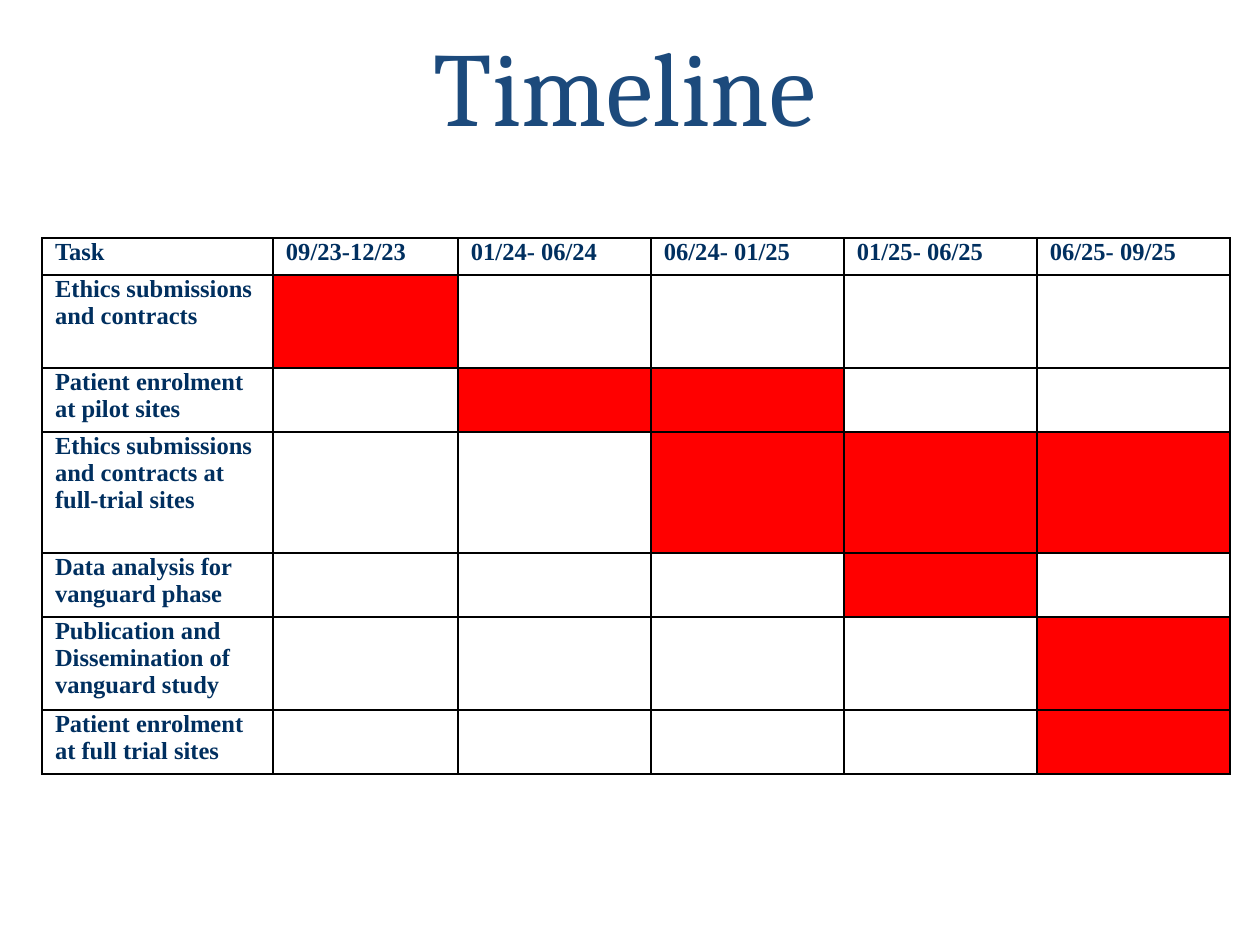
from dataclasses import dataclass

from lxml.etree import SubElement
from pptx import Presentation
from pptx.dml.color import RGBColor
from pptx.enum.text import MSO_ANCHOR, PP_ALIGN
from pptx.oxml.ns import qn
from pptx.slide import Slide
from pptx.table import _Cell
from pptx.util import Emu, Pt

PX = 914400 // 126
TITLE_BLUE = RGBColor(0x1C, 0x4A, 0x7C)
TEXT_NAVY = RGBColor(0x00, 0x2F, 0x5F)
ACTIVE_RED = RGBColor(0xFF, 0x00, 0x00)
BORDER_BLACK = RGBColor(0x00, 0x00, 0x00)


@dataclass(frozen=True)
class Task:
    name: str
    first: int
    last: int
    height: int


PERIODS = ["09/23-12/23", "01/24- 06/24", "06/24- 01/25", "01/25- 06/25", "06/25- 09/25"]
TASKS = [
    Task("Ethics submissions and contracts", 1, 1, 93),
    Task("Patient enrolment at pilot sites", 2, 3, 64),
    Task("Ethics submissions and contracts at full-trial sites", 3, 5, 121),
    Task("Data analysis for vanguard phase", 4, 4, 64),
    Task("Publication and Dissemination of vanguard study", 5, 5, 93),
    Task("Patient enrolment at full trial sites", 5, 5, 64),
]
HEADER_HEIGHT = 37
COLUMN_WIDTHS = [231, 185, 193, 193, 193, 193]


def px(length: int) -> Emu:
    return Emu(length * PX)


def add_title(page: Slide, text: str) -> None:
    box = page.shapes.add_textbox(px(21), px(21), px(1207), px(158))
    frame = box.text_frame
    frame.word_wrap = True
    frame.vertical_anchor = MSO_ANCHOR.TOP
    frame.margin_left = frame.margin_right = frame.margin_top = frame.margin_bottom = 0
    para = frame.paragraphs[0]
    para.text = text
    para.alignment = PP_ALIGN.CENTER
    para.font.name = "Cambria"
    para.font.size = Pt(60)
    para.font.color.rgb = TITLE_BLUE


def style_cell(cell: _Cell, active: bool) -> None:
    """Draw the four borders, then the fill, in the order the schema asks for."""
    properties = cell._tc.get_or_add_tcPr()
    for side in ("a:lnL", "a:lnR", "a:lnT", "a:lnB"):
        line = SubElement(properties, qn(side), w=str(Pt(1)))
        fill = SubElement(line, qn("a:solidFill"))
        SubElement(fill, qn("a:srgbClr"), val=str(BORDER_BLACK))
    if active:
        cell.fill.solid()
        cell.fill.fore_color.rgb = ACTIVE_RED
    else:
        cell.fill.background()


def write_cell(cell: _Cell, text: str) -> None:
    cell.margin_left = cell.margin_right = px(13)
    cell.margin_top = px(1)
    cell.margin_bottom = 0
    para = cell.text_frame.paragraphs[0]
    para.text = text
    para.font.name = "Times New Roman"
    para.font.size = Pt(14)
    para.font.bold = True
    para.font.color.rgb = TEXT_NAVY


def add_timeline(page: Slide) -> None:
    heights = [HEADER_HEIGHT] + [task.height for task in TASKS]
    frame = page.shapes.add_table(
        len(heights), len(COLUMN_WIDTHS), px(42), px(238),
        px(sum(COLUMN_WIDTHS)), px(sum(heights)),
    )
    table = frame.table
    table.first_row = table.horz_banding = False
    for column, width in zip(table.columns, COLUMN_WIDTHS):
        column.width = px(width)
    for row, height in zip(table.rows, heights):
        row.height = px(height)

    for index, heading in enumerate(["Task", *PERIODS]):
        style_cell(table.cell(0, index), False)
        write_cell(table.cell(0, index), heading)
    for row_index, task in enumerate(TASKS, start=1):
        for index in range(len(COLUMN_WIDTHS)):
            style_cell(table.cell(row_index, index), task.first <= index <= task.last)
        write_cell(table.cell(row_index, 0), task.name)


def main() -> None:
    deck = Presentation()
    deck.slide_width, deck.slide_height = px(1260), px(945)
    page = deck.slides.add_slide(deck.slide_layouts[6])
    add_title(page, "Timeline")
    add_timeline(page)
    deck.save("out.pptx")


if __name__ == "__main__":
    main()
